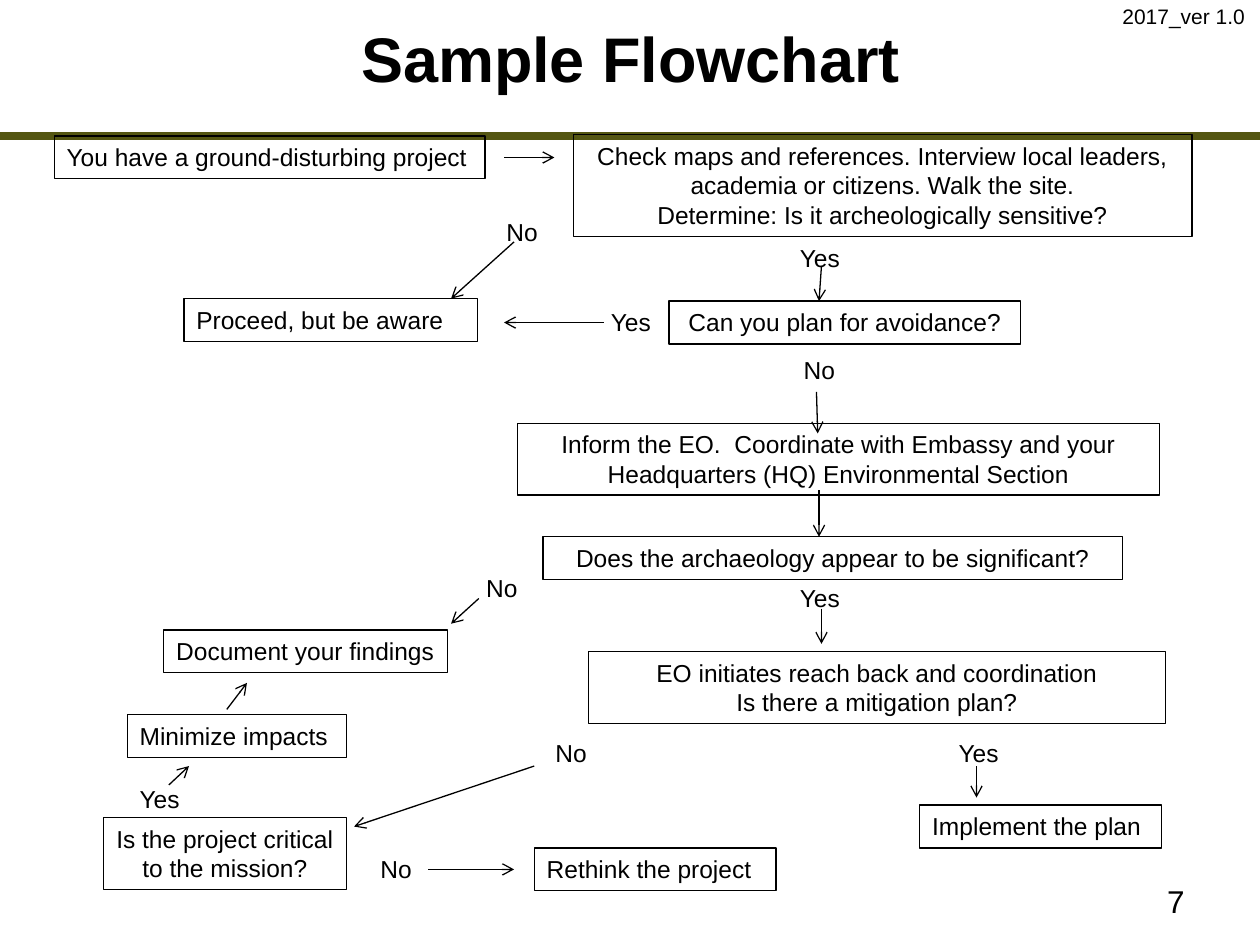
from dataclasses import dataclass

from lxml import etree
from pptx import Presentation
from pptx.dml.color import RGBColor
from pptx.enum import shapes, text
from pptx.oxml.ns import qn
from pptx.util import Inches, Pt


@dataclass(frozen=True)
class Theme:
    font: str = "Arial"
    ink: RGBColor = RGBColor(0, 0, 0)
    rule: RGBColor = RGBColor(0x54, 0x56, 0x12)
    title: int = 36
    page: int = 18
    body: int = 14
    version: int = 12
    thin: float = 0.75
    thick: float = 4.5


THEME = Theme()
LEFT, CENTER, RIGHT = text.PP_ALIGN.LEFT, text.PP_ALIGN.CENTER, text.PP_ALIGN.RIGHT
ONE_LINE, TWO_LINES, THREE_LINES = 0.34, 0.57, 0.81
LABEL_WIDTHS = {"Yes": 0.67, "No": 0.48}

# Flowchart positions are inches from the top left of the chart area.
# Step: left, top, width, height, alignment, wording
STEPS = [
    (0.43, 0.08, 3.42, ONE_LINE, LEFT, "You have a ground-disturbing project"),
    (4.55, 0.07, 4.91, THREE_LINES, CENTER,
     "Check maps and references. Interview local leaders, academia or citizens. "
     "Walk the site.\nDetermine: Is it archeologically sensitive?"),
    (1.46, 1.37, 2.33, ONE_LINE, LEFT, "Proceed, but be aware"),
    (5.31, 1.39, 2.79, ONE_LINE, CENTER, "Can you plan for avoidance?"),
    (4.11, 2.36, 5.09, TWO_LINES, CENTER,
     "Inform the EO.  Coordinate with Embassy and your\v"
     "Headquarters (HQ) Environmental Section"),
    (4.31, 3.26, 4.6, ONE_LINE, CENTER, "Does the archaeology appear to be significant?"),
    (1.3, 4, 2.25, ONE_LINE, LEFT, "Document your findings"),
    (4.67, 4.17, 4.58, TWO_LINES, CENTER,
     "EO initiates reach back and coordination\nIs there a mitigation plan?"),
    (1.01, 4.67, 1.74, ONE_LINE, LEFT, "Minimize impacts"),
    (0.82, 5.49, 1.93, TWO_LINES, CENTER, "Is the project critical to the mission?"),
    (7.3, 5.39, 1.92, ONE_LINE, LEFT, "Implement the plan"),
    (4.24, 5.73, 1.92, ONE_LINE, LEFT, "Rethink the project"),
]

# Answer: left, top, wording
ANSWERS = [
    (3.92, 0.67, "No"), (6.25, 0.88, "Yes"), (4.75, 1.39, "Yes"),
    (6.28, 1.77, "No"), (3.76, 3.5, "No"), (6.25, 3.58, "Yes"),
    (1.01, 5.17, "Yes"), (4.31, 4.81, "No"), (7.51, 4.81, "Yes"),
]
RETHINK_ANSWER = (2.92, 5.73, "No")

# Arrow: start x, start y, end x, end y
ARROWS = [
    (4, 0.25, 4.4, 0.25), (4.08, 0.92, 3.58, 1.37), (6.52, 1.11, 6.5, 1.39),
    (4.79, 1.56, 4, 1.56), (6.48, 2.11, 6.49, 2.44), (6.5, 2.89, 6.5, 3.26),
    (3.8, 3.75, 3.58, 3.95), (6.52, 3.83, 6.52, 4.11), (1.8, 4.63, 1.96, 4.42),
    (1.34, 5.23, 1.5, 5.08), (4.24, 5.08, 2.81, 5.56), (7.75, 5.08, 7.75, 5.33),
]
RETHINK_ARROW = (3.4, 5.9, 4.08, 5.9)


def write(sp, words, size, align=LEFT, bold=False, wrap=True, anchor=text.MSO_ANCHOR.TOP):
    tf = sp.text_frame
    tf.word_wrap = wrap
    tf.auto_size = text.MSO_AUTO_SIZE.NONE
    tf.vertical_anchor = anchor
    tf.text = words
    for p in tf.paragraphs:
        p.alignment = align
        p.font.name = THEME.font
        p.font.size = Pt(size)
        p.font.bold = bold
        p.font.color.rgb = THEME.ink


def add_text(s, box, words, size, **style):
    sp = s.shapes.add_textbox(*box)
    write(sp, words, size, **style)
    return sp


def add_step(s, box, words, align):
    sp = s.shapes.add_shape(shapes.MSO_SHAPE.RECTANGLE, *box)
    sp.shadow.inherit = False
    sp.fill.background()
    sp.line.color.rgb = THEME.ink
    sp.line.width = Pt(THEME.thin)
    write(sp, words, THEME.body, align)


def add_line(s, ends, color, width, arrow=False):
    line = s.shapes.add_connector(shapes.MSO_CONNECTOR.STRAIGHT, *ends)
    line.line.color.rgb = color
    line.line.width = Pt(width)
    if arrow:
        etree.SubElement(line.line._get_or_add_ln(), qn("a:tailEnd"), type="arrow")
    etree.SubElement(line._element.spPr, qn("a:effectLst"))
    return line


def add_header(s, left, top, width):
    rule_y = top + Inches(1.08)
    add_line(s, (left, rule_y, left + width, rule_y), THEME.rule, THEME.thick)
    title = s.shapes.title
    title.left, title.top = left + Inches(1.17), top + Inches(0.08)
    title.width, title.height = Inches(7.67), Inches(0.75)
    write(title, "Sample Flowchart", THEME.title, CENTER, bold=True,
          anchor=text.MSO_ANCHOR.MIDDLE)
    add_text(s, (left + Inches(8.81), top - Inches(0.02), Inches(1.18), Inches(0.3)),
             "2017_ver 1.0", THEME.version, wrap=False)


def add_flowchart(s, left, top):
    def at(x, y):
        return left + Inches(x), top + Inches(y)

    def answer(x, y, words):
        box = (*at(x, y), Inches(LABEL_WIDTHS[words]), Inches(ONE_LINE))
        return add_text(s, box, words, THEME.body)

    def arrow(x1, y1, x2, y2):
        return add_line(s, (*at(x1, y1), *at(x2, y2)), THEME.ink, THEME.thin, arrow=True)

    for x, y, width, height, align, words in STEPS:
        add_step(s, (*at(x, y), Inches(width), Inches(height)), words, align)
    for item in ANSWERS:
        answer(*item)
    for ends in ARROWS:
        arrow(*ends)
    arrow(*RETHINK_ARROW).begin_connect(answer(*RETHINK_ANSWER), 3)


def add_page_number(s, left, top, width, height):
    add_text(s, (left, top, width, height), "7", THEME.page, align=RIGHT)


def main():
    prs = Presentation()
    prs.slide_width, prs.slide_height = Inches(10), Inches(7.5)
    s = prs.slides.add_slide(prs.slide_layouts[5])
    add_header(s, 0, 0, prs.slide_width)
    add_flowchart(s, 0, Inches(1))
    add_page_number(s, Inches(7.17), Inches(6.95), Inches(2.33), Inches(0.4))
    prs.save("out.pptx")


if __name__ == "__main__":
    main()
